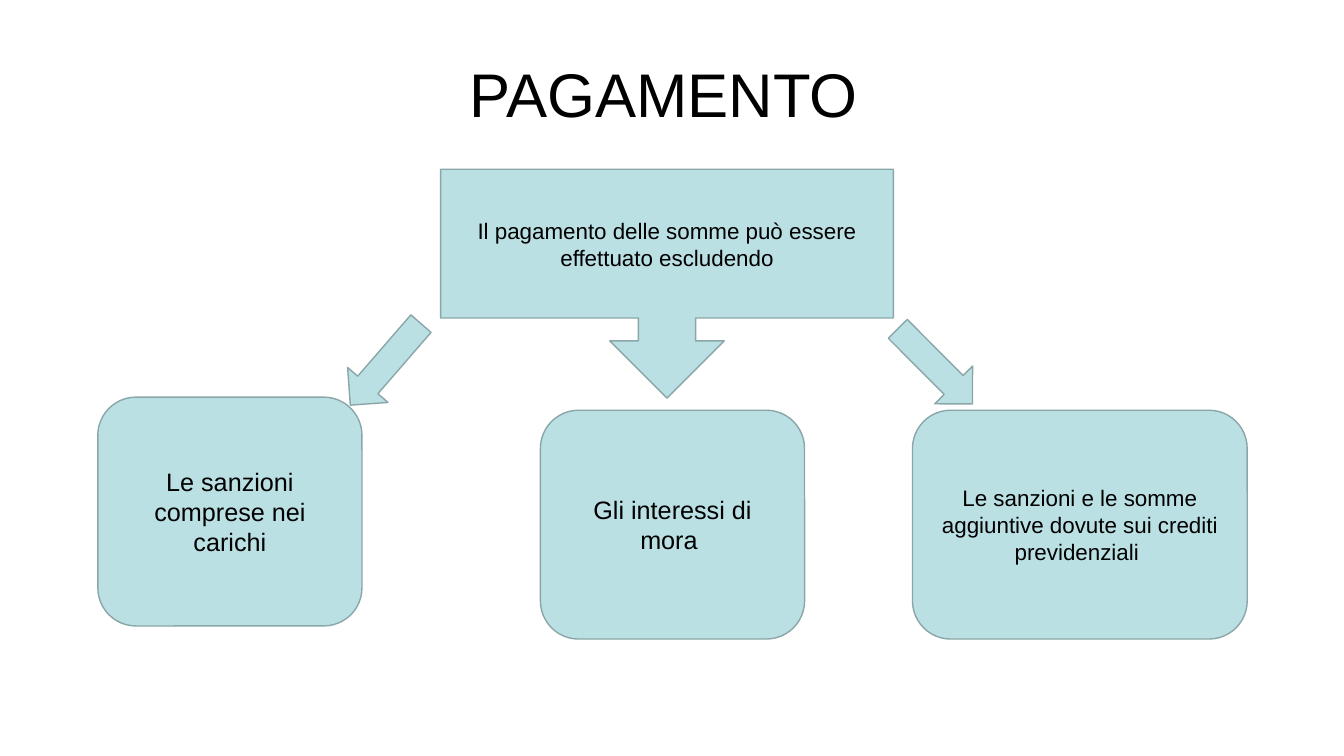
import pptx
import pptx.util
import pptx.dml.color
import pptx.enum.shapes
import pptx.enum.text

SHAPES = pptx.enum.shapes.MSO_SHAPE
BLACK = pptx.dml.color.RGBColor(0x00, 0x00, 0x00)
AQUA = pptx.dml.color.RGBColor(0xBB, 0xE0, 0xE3)
GREY_TEAL = pptx.dml.color.RGBColor(0x8A, 0xA6, 0xA8)

WIDTH, HEIGHT = 13.33, 7.5
BOX_HEIGHT = 2.27
TITLE = "PAGAMENTO "
TITLE_AREA = (0.67, 0.3, 12, 1.25)

BOXES = [
    (SHAPES.DOWN_ARROW_CALLOUT, 4.37, 1.68, 4.49, 16,
     "Il pagamento delle somme può essere effettuato escludendo"),
    (SHAPES.ROUNDED_RECTANGLE, 0.97, 3.94, 2.62, 18,
     "Le sanzioni comprese nei carichi"),
    (SHAPES.ROUNDED_RECTANGLE, 5.36, 4.07, 2.62, 18,
     "Gli interessi di mora "),
    (SHAPES.ROUNDED_RECTANGLE, 9.05, 4.07, 3.32, 16,
     "Le sanzioni e le somme aggiuntive dovute sui crediti previdenziali "),
]
ARROWS = [
    (SHAPES.RIGHT_ARROW, (8.75, 3.37, 1.05, 0.53), 45.1),
    (SHAPES.LEFT_ARROW, (3.29, 3.35, 1.07, 0.53), 310.9),
]


def inches(lengths):
    return [pptx.util.Inches(length) for length in lengths]


def write(shape, text, size):
    frame = shape.text_frame
    frame.word_wrap = True
    frame.vertical_anchor = pptx.enum.text.MSO_ANCHOR.MIDDLE
    para = frame.paragraphs[0]
    para.alignment = pptx.enum.text.PP_ALIGN.CENTER
    span = para.add_run()
    span.text = text
    span.font.name = "Arial"
    span.font.size = pptx.util.Pt(size)
    span.font.color.rgb = BLACK


def add_figure(page, kind, area):
    shape = page.shapes.add_shape(kind, *inches(area))
    shape.shadow.inherit = False
    shape.fill.solid()
    shape.fill.fore_color.rgb = AQUA
    shape.line.color.rgb = GREY_TEAL
    shape.line.width = pptx.util.Pt(1)
    return shape


def main():
    deck = pptx.Presentation()
    deck.slide_width, deck.slide_height = inches((WIDTH, HEIGHT))
    page = deck.slides.add_slide(deck.slide_layouts[5])

    title = page.shapes.title
    title.left, title.top, title.width, title.height = inches(TITLE_AREA)
    write(title, TITLE, 44)

    for kind, left, top, width, size, text in BOXES:
        box = add_figure(page, kind, (left, top, width, BOX_HEIGHT))
        write(box, text, size)

    for kind, area, angle in ARROWS:
        add_figure(page, kind, area).rotation = angle

    deck.save("out.pptx")


if __name__ == "__main__":
    main()
